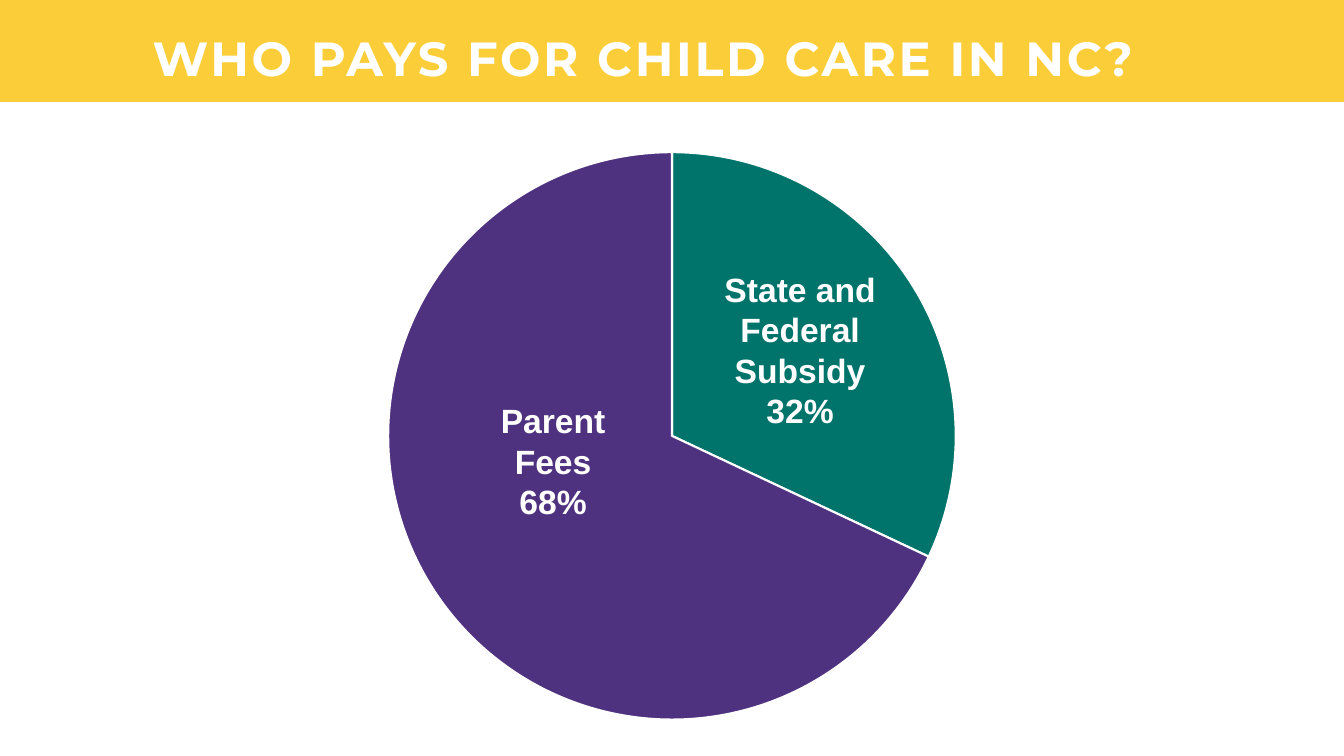
"""Build a slide with a pie chart of who pays for child care."""
from pptx import Presentation
from pptx.chart.data import CategoryChartData as ChartData
from pptx.dml.color import RGBColor as Color
from pptx.enum.chart import XL_CHART_TYPE as ChartType
from pptx.enum.shapes import MSO_SHAPE as Shape
from pptx.enum.text import MSO_AUTO_SIZE as AutoSize, PP_ALIGN as Align
from pptx.oxml import parse_xml
from pptx.oxml.ns import nsdecls
from pptx.util import Inches, Pt

WIDTH, HEIGHT = 13.33, 7.5
COLORS = {
    "band": "FBCE39",
    "subsidy": "00736B",
    "fees": "4F327F",
    "third": "A5A5A5",
    "fourth": "FFC000",
    "white": "FFFFFF",
    "black": "000000",
}


class SlideBuilder:
    """Hold the style and the current slide, placing elements by share of its size."""

    def __init__(self, deck):
        """Add a blank page to the deck."""
        self.page = deck.slides.add_slide(deck.slide_layouts[6])

    def place(self, left, top, width, height):
        """Turn shares of the slide into lengths."""
        return (Inches(left * WIDTH), Inches(top * HEIGHT),
                Inches(width * WIDTH), Inches(height * HEIGHT))

    def color(self, name):
        """Return a named colour."""
        return Color.from_string(COLORS[name])

    def band(self, area, fill):
        """Add a plain filled rectangle."""
        band = self.page.shapes.add_shape(Shape.RECTANGLE, *self.place(*area))
        band.shadow.inherit = False
        band.fill.solid()
        band.fill.fore_color.rgb = self.color(fill)
        band.line.fill.background()

    def text(self, area, lines, font, size, leading, tracking=0, inset=None):
        """Add a centred bold white text box, one paragraph a line."""
        box = self.page.shapes.add_textbox(*self.place(*area))
        frame = box.text_frame
        frame.word_wrap = True
        frame.auto_size = AutoSize.SHAPE_TO_FIT_TEXT
        if inset is not None:
            frame.margin_left = frame.margin_right = Inches(inset)
            frame.margin_top = frame.margin_bottom = Inches(inset)
        for index, line in enumerate(lines):
            para = frame.add_paragraph() if index else frame.paragraphs[0]
            para.alignment = Align.CENTER
            para.line_spacing = Pt(leading)
            span = para.add_run()
            span.text = line
            span.font.name = font
            span.font.size = Pt(size)
            span.font.bold = True
            span.font.color.rgb = self.color("white")
            if tracking:
                span._r.get_or_add_rPr().set("spc", str(round(tracking * 100)))

    def pie(self, area, values, fills, plot_area):
        """Add a pie chart without labels, its plot set as shares of the chart."""
        data = ChartData()
        data.categories = [str(number) for number in range(1, len(values) + 1)]
        data.add_series("Series 1", values)
        chart = self.page.shapes.add_chart(
            ChartType.PIE, *self.place(*area), data).chart
        chart.has_legend = False
        chart.has_title = False
        chart.font.name = "Quicksand"
        chart.font.size = Pt(10)
        chart.font.color.rgb = self.color("black")
        plot = chart.plots[0]
        plot.vary_by_categories = True
        for index, fill in enumerate(fills):
            style = plot.series[0].points[index].format
            style.fill.solid()
            style.fill.fore_color.rgb = self.color(fill)
            style.line.color.rgb = self.color("white")
            style.line.width = Pt(1.5)
        sizes = "".join(f'<c:{key} val="{share}"/>'
                        for key, share in zip("xywh", plot_area))
        layout = parse_xml(
            f'<c:layout {nsdecls("c")}><c:manualLayout>'
            '<c:layoutTarget val="inner"/><c:xMode val="edge"/>'
            f'<c:yMode val="edge"/>{sizes}</c:manualLayout></c:layout>')
        holder = chart._chartSpace.chart.plotArea
        for old in holder.findall(layout.tag):
            holder.remove(old)
        holder.insert(0, layout)


def main():
    """Build and save the deck."""
    deck = Presentation()
    deck.slide_width, deck.slide_height = Inches(WIDTH), Inches(HEIGHT)
    slide = SlideBuilder(deck)
    slide.band((0, 0, 1, 1.01 / HEIGHT), "band")
    slide.text((0.53 / WIDTH, 0.36 / HEIGHT, 11.7 / WIDTH, 0.5 / HEIGHT),
               ["WHO PAYS FOR CHILD CARE IN NC?"],
               "Montserrat", 34.2, 35.9, tracking=1.9, inset=0)

    pie_width, pie_height, diameter = 8.89, 5.93, 5.63
    across, down = diameter / pie_width, diameter / pie_height
    slide.pie(((1 - pie_width / WIDTH) / 2, 1.36 / HEIGHT,
               pie_width / WIDTH, pie_height / HEIGHT),
              [32, 68, None, None], ["subsidy", "fees", "third", "fourth"],
              ((1 - across) / 2, (1 - down) / 2, across, down))

    labels = [
        (7.04, 2.62, 1.72, ["State and Federal Subsidy", "32%"]),
        (4.59, 3.92, 1.31, ["Parent", "Fees", "68%"]),
    ]
    for left, top, height, lines in labels:
        slide.text((left / WIDTH, top / HEIGHT, 1.79 / WIDTH, height / HEIGHT),
                   lines, "Arial", 24, 28.8)
    deck.save("out.pptx")


if __name__ == "__main__":
    main()
